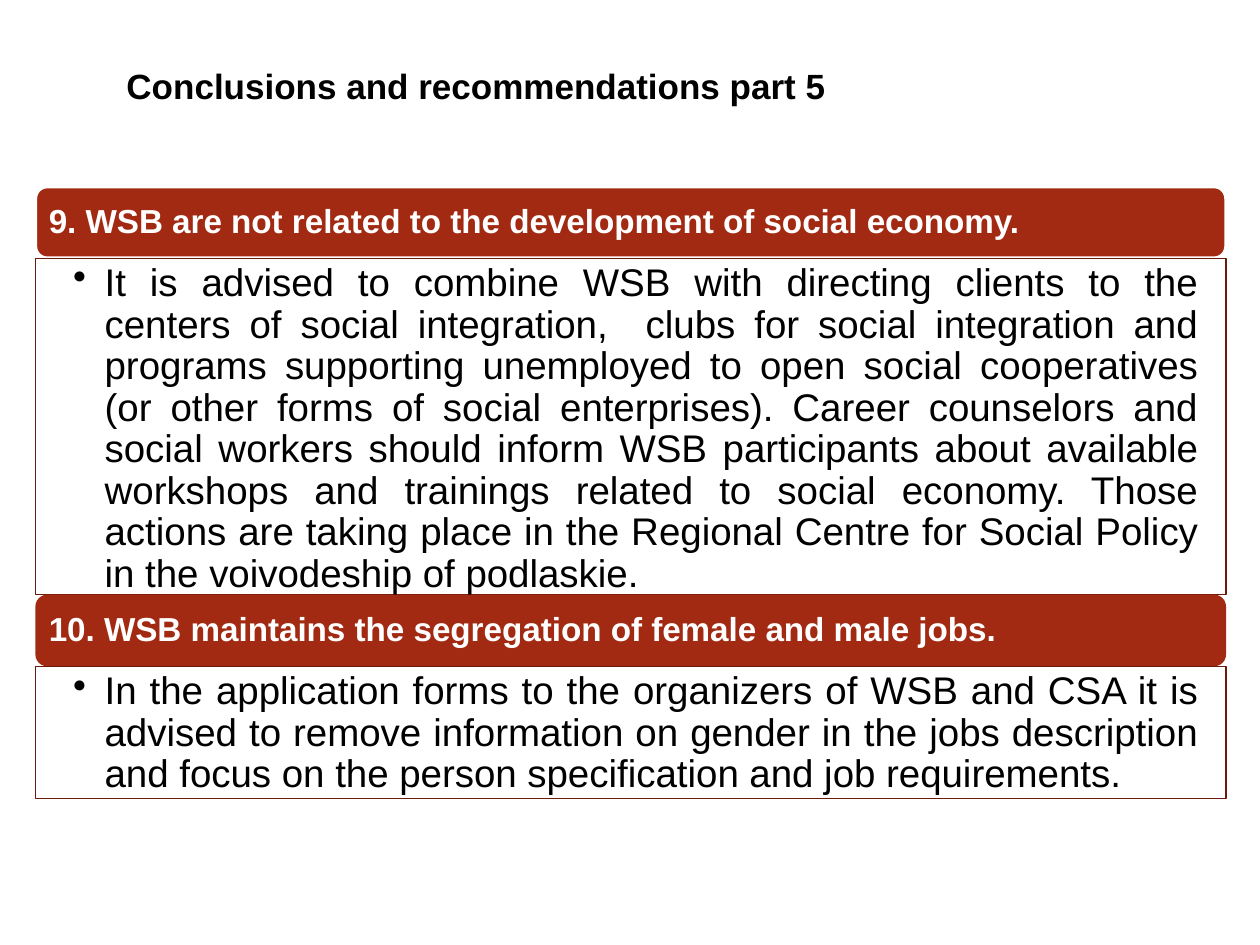
from dataclasses import dataclass

import pptx
import pptx.dml.color
import pptx.enum.shapes
import pptx.enum.text
import pptx.oxml.ns
import pptx.util
from lxml import etree

Pt = pptx.util.Pt
RGB = pptx.dml.color.RGBColor
Shape = pptx.enum.shapes.MSO_SHAPE
Align = pptx.enum.text.PP_ALIGN
Anchor = pptx.enum.text.MSO_ANCHOR


@dataclass(frozen=True)
class Theme:
    font: str = "Arial"
    black: RGB = RGB(0, 0, 0)
    white: RGB = RGB(255, 255, 255)
    brick: RGB = RGB(0xA2, 0x2A, 0x12)
    outline: RGB = RGB(0x6A, 0x1C, 0x0C)
    title_size: float = 20
    conclusion_size: float = 19
    advice_size: float = 22


THEME = Theme()
LEFT, TOP, WIDTH = 20.2, 106.6, 680.4
BAR_HEIGHT = 41

# Conclusion, recommendation, height of the recommendation box
FINDINGS = [
    (
        "9. WSB are not related to the development of social economy.",
        "It is advised to combine WSB with directing clients to the centers of "
        "social integration,  clubs for social integration and programs supporting "
        "unemployed to open social cooperatives (or other forms of social "
        "enterprises). Career counselors and social workers should inform WSB "
        "participants about available workshops and trainings related to social "
        "economy. Those actions are taking place in the Regional Centre for Social "
        "Policy in the voivodeship of podlaskie.",
        192.2,
    ),
    (
        "10. WSB maintains the segregation of female and male jobs.",
        "In the application forms to the organizers of WSB and CSA it is advised to "
        "remove information on gender in the jobs description and focus on the "
        "person specification and job requirements.",
        75.6,
    ),
]


def add_run(paragraph, text, size, color, bold=False):
    run = paragraph.add_run()
    run.text = text
    run.font.name = THEME.font
    run.font.size = Pt(size)
    run.font.bold = bold
    run.font.color.rgb = color


def add_box(slide, kind, top, height, insets, anchor):
    """Add a full-width box; insets run left, top, right, bottom."""
    box = slide.shapes.add_shape(kind, Pt(LEFT), Pt(top), Pt(WIDTH), Pt(height))
    box.shadow.inherit = False
    frame = box.text_frame
    frame.word_wrap = True
    frame.vertical_anchor = anchor
    (frame.margin_left, frame.margin_top,
     frame.margin_right, frame.margin_bottom) = map(Pt, insets)
    frame.paragraphs[0].line_spacing = 0.9
    return box


def set_bullet(paragraph, indent):
    properties = paragraph._p.get_or_add_pPr()
    properties.set("marL", str(Pt(indent)))
    properties.set("indent", str(-Pt(indent)))
    bullet = etree.SubElement(properties, pptx.oxml.ns.qn("a:buChar"))
    bullet.set("char", "•")


def add_conclusion(slide, text, top):
    bar = add_box(slide, Shape.ROUNDED_RECTANGLE, top, BAR_HEIGHT,
                  (5.7, 5.7, 5.7, 5.7), Anchor.MIDDLE)
    bar.fill.solid()
    bar.fill.fore_color.rgb = THEME.brick
    bar.line.fill.background()
    paragraph = bar.text_frame.paragraphs[0]
    paragraph.alignment = Align.LEFT
    add_run(paragraph, text, THEME.conclusion_size, THEME.white, bold=True)
    return bar


def add_recommendation(slide, text, top, height):
    box = add_box(slide, Shape.RECTANGLE, top, height,
                  (21.6, 2.9, 15.8, 2.9), Anchor.TOP)
    box.fill.background()
    box.line.color.rgb = THEME.outline
    box.line.width = Pt(0.75)
    paragraph = box.text_frame.paragraphs[0]
    paragraph.level = 1
    paragraph.alignment = Align.JUSTIFY
    set_bullet(paragraph, 18)
    add_run(paragraph, text, THEME.advice_size, THEME.black)


def set_title(slide, text):
    title = slide.shapes.title
    title.left, title.top, title.width, title.height = map(Pt, (54, 25.9, 436.3, 46.1))
    title.text_frame.vertical_anchor = Anchor.MIDDLE
    paragraph = title.text_frame.paragraphs[0]
    paragraph.alignment = Align.CENTER
    add_run(paragraph, text, THEME.title_size, THEME.black, bold=True)


def main():
    deck = pptx.Presentation()
    deck.slide_width, deck.slide_height = Pt(720), Pt(540)
    slide = deck.slides.add_slide(deck.slide_layouts[5])
    set_title(slide, "Conclusions and recommendations part 5")

    top = TOP
    bars = []
    for conclusion, recommendation, height in FINDINGS:
        bars.append(add_conclusion(slide, conclusion, top))
        add_recommendation(slide, recommendation, top + BAR_HEIGHT, height)
        top += BAR_HEIGHT + height

    bars[0].line.color.rgb = THEME.white
    bars[0].line.width = Pt(2)
    deck.save("out.pptx")


if __name__ == "__main__":
    main()
